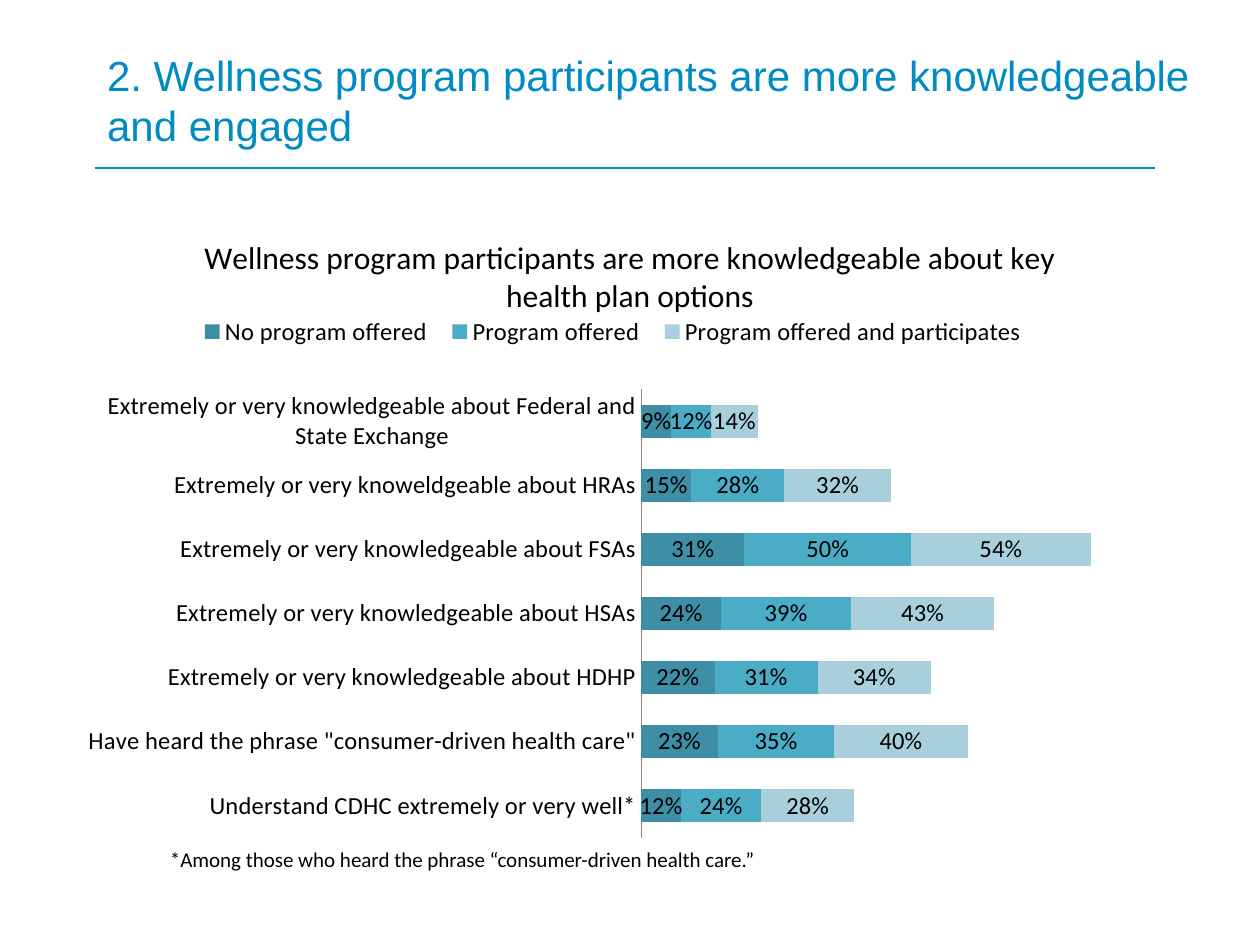
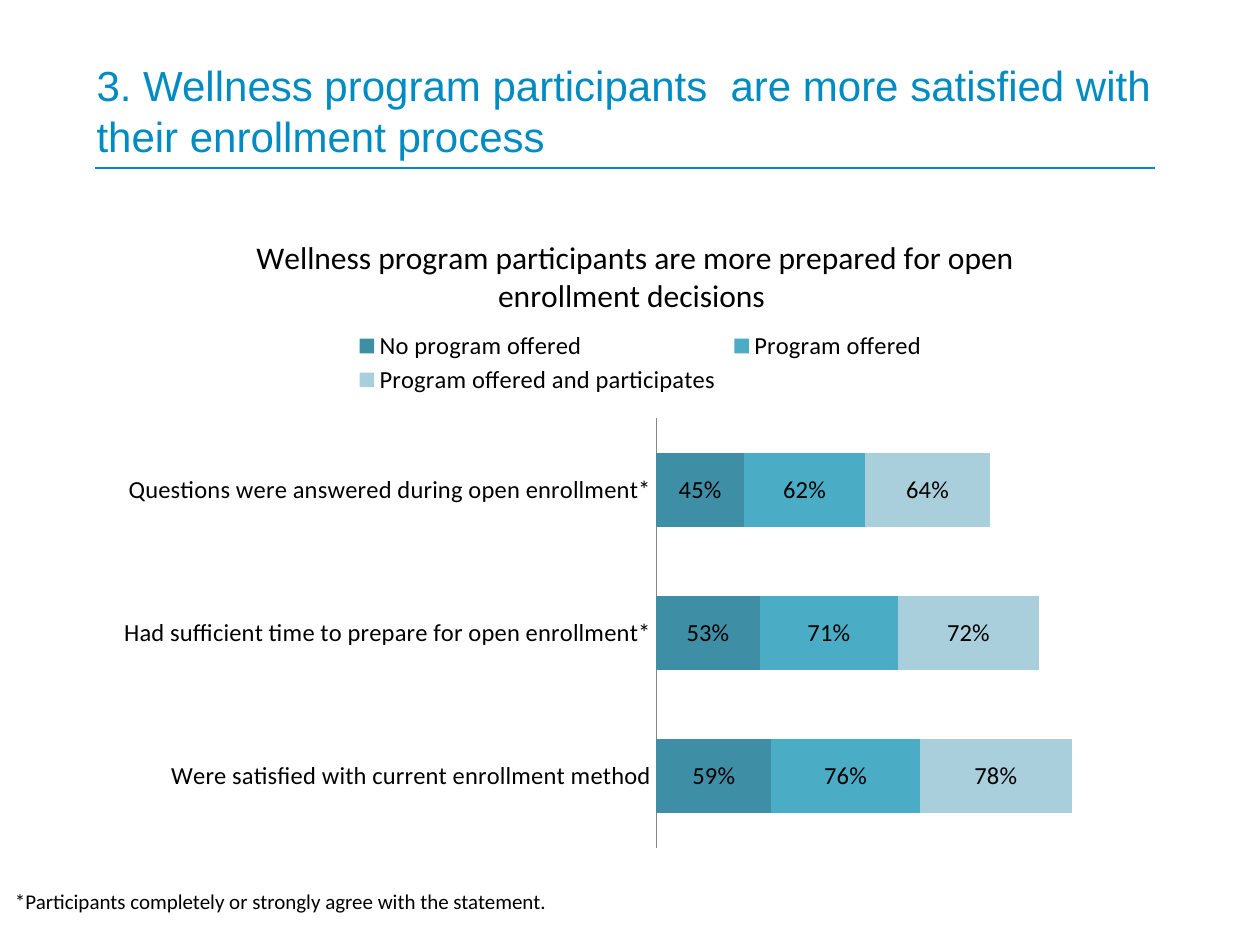
from dataclasses import dataclass

from pptx import Presentation
from pptx import util as u
from pptx.chart import chart as ch, data as cd
from pptx.dml import color
from pptx.enum import chart as ce, shapes, text
from pptx.oxml import parse_xml
from pptx.oxml import ns
from pptx.slide import Slide


@dataclass(frozen=True)
class Theme:
    """Colours, fonts and type sizes."""
    blue: str = "008BC2"
    ink: str = "000000"
    axis: str = "868686"
    bars: tuple[str, ...] = ("3E8EA5", "4BACC6", "A9CEDC")
    head: str = "Arial"
    body: str = "Calibri"
    title: int = 24
    chart: int = 18
    label: int = 14
    note: int = 12


@dataclass(frozen=True)
class Box:
    """Place and size: points on a slide, shares within a chart."""
    left: float
    top: float
    width: float
    height: float

    def points(self) -> tuple[u.Length, ...]:
        return tuple(u.Pt(n) for n in (self.left, self.top, self.width, self.height))


@dataclass(frozen=True)
class Page:
    title: str
    title_box: Box
    chart: str
    chart_box: Box
    plot_box: Box
    key_box: Box
    top: float  # end of the value axis
    rows: dict[str, tuple[float, ...]]  # bottom bar first
    note: str
    note_box: Box


THEME = Theme()
GROUPS = ("No program offered", "Program offered", "Program offered and participates")

PAGES = (
    Page(
        "2. Wellness program participants are more knowledgeable and engaged",
        Box(54, 12, 648, 90),
        "Wellness program participants are more knowledgeable about key health plan options",
        Box(36, 120, 648, 366),
        Box(0.51, 0.28, 0.47, 0.7),
        Box(0.11, 0.16, 0.75, 0.06),
        1.6,
        {
            "Understand CDHC extremely or very well*": (0.12, 0.24, 0.28),
            'Have heard the phrase "consumer-driven health care"': (0.23, 0.35, 0.4),
            "Extremely or very knowledgeable about HDHP": (0.22, 0.31, 0.34),
            "Extremely or very knowledgeable about HSAs": (0.24, 0.39, 0.43),
            "Extremely or very knowledgeable about FSAs": (0.31, 0.5, 0.54),
            "Extremely or very knoweldgeable about HRAs": (0.15, 0.28, 0.32),
            "Extremely or very knowledgeable about Federal and State Exchange":
                (0.09, 0.12, 0.14),
        },
        "*Among those who heard the phrase “consumer-driven health care.”",
        Box(90, 480, 510, 21.6),
    ),
    Page(
        "3. Wellness program participants  are more satisfied with their enrollment process",
        Box(48, 18, 648, 90),
        "Wellness program participants are more prepared for open enrollment decisions ",
        Box(60, 120, 606, 372),
        Box(0.52, 0.32, 0.46, 0.66),
        Box(0.23, 0.18, 0.55, 0.11),
        2.5,
        {
            "Were satisfied with current enrollment method": (0.59, 0.76, 0.78),
            "Had sufficient time to prepare for open enrollment*": (0.53, 0.71, 0.72),
            "Questions were answered during open enrollment*": (0.45, 0.62, 0.64),
        },
        "*Participants completely or strongly agree with the statement.",
        Box(1.5, 504, 612, 21.6),
    ),
)


def rgb(code: str) -> color.RGBColor:
    return color.RGBColor.from_string(code)


def style(font: text.MSO_ANCHOR, size: int, face: str = THEME.body,
          ink: str = THEME.ink) -> None:
    font.name, font.size, font.bold = face, u.Pt(size), False
    font.color.rgb = rgb(ink)


def pin(part, box: Box, slot: int, inner: bool = False) -> None:
    """Fix a chart part in place, as shares of the chart."""
    for old in part.findall(ns.qn("c:layout")):
        part.remove(old)
    target = '<c:layoutTarget val="inner"/>' if inner else ""
    modes = '<c:xMode val="edge"/><c:yMode val="edge"/>'
    sizes = (f'<c:x val="{box.left}"/><c:y val="{box.top}"/>'
             f'<c:w val="{box.width}"/><c:h val="{box.height}"/>')
    part.insert(slot, parse_xml(
        f'<c:layout {ns.nsdecls("c")}><c:manualLayout>{target}{modes}{sizes}'
        "</c:manualLayout></c:layout>"))


def add_title(slide: Slide, page: Page) -> None:
    title = slide.shapes.title
    title.left, title.top, title.width, title.height = page.title_box.points()
    frame = title.text_frame
    frame.text = page.title
    frame.auto_size = text.MSO_AUTO_SIZE.NONE
    frame.vertical_anchor = text.MSO_ANCHOR.MIDDLE
    para = frame.paragraphs[0]
    para.alignment = text.PP_ALIGN.LEFT
    style(para.font, THEME.title, THEME.head, THEME.blue)


def add_rule(slide: Slide) -> None:
    rule = slide.shapes.add_connector(
        shapes.MSO_CONNECTOR.STRAIGHT, u.Pt(54), u.Pt(96), u.Pt(660), u.Pt(96))
    rule.line.color.rgb = rgb(THEME.blue)
    rule.line.width = u.Pt(1)
    rule._element.spPr.append(parse_xml(f'<a:effectLst {ns.nsdecls("a")}/>'))


def add_bars(slide: Slide, page: Page) -> None:
    data = cd.CategoryChartData(number_format="0%")
    data.categories = list(page.rows)
    for name, vals in zip(GROUPS, zip(*page.rows.values())):
        data.add_series(name, vals)
    chart: ch.Chart = slide.shapes.add_chart(
        ce.XL_CHART_TYPE.BAR_STACKED, *page.chart_box.points(), data).chart
    style(chart.font, THEME.label)

    # Heading and key
    chart.has_title = True
    head = chart.chart_title.text_frame
    head.text = page.chart
    style(head.paragraphs[0].font, THEME.chart)
    chart.has_legend = True
    key = chart.legend
    key.position = ce.XL_LEGEND_POSITION.TOP
    key.include_in_layout = False
    style(key.font, THEME.label)
    pin(key._element, page.key_box, 1)

    # Axes
    cats, vals = chart.category_axis, chart.value_axis
    cats.major_tick_mark = ce.XL_TICK_MARK.NONE
    cats.format.line.color.rgb = rgb(THEME.axis)
    style(cats.tick_labels.font, THEME.label)
    vals.minimum_scale, vals.maximum_scale = 0, page.top
    vals.has_major_gridlines = False
    vals.visible = False

    # Bars and their labels
    plot = chart.plots[0]
    plot.gap_width, plot.overlap = 95, 100
    plot.vary_by_categories = False
    for bar, code in zip(plot.series, THEME.bars):
        bar.format.fill.solid()
        bar.format.fill.fore_color.rgb = rgb(code)
    plot.has_data_labels = True
    tags = plot.data_labels
    tags.show_value = True
    tags.number_format, tags.number_format_is_linked = "0%", False
    style(tags.font, THEME.label)
    pin(chart._chartSpace.chart.plotArea, page.plot_box, 0, inner=True)


def add_note(slide: Slide, page: Page) -> None:
    frame = slide.shapes.add_textbox(*page.note_box.points()).text_frame
    frame.word_wrap = True
    frame.auto_size = text.MSO_AUTO_SIZE.SHAPE_TO_FIT_TEXT
    frame.text = page.note
    style(frame.paragraphs[0].font, THEME.note)


def main() -> None:
    deck = Presentation()
    deck.slide_width, deck.slide_height = u.Pt(720), u.Pt(540)
    for page in PAGES:
        slide = deck.slides.add_slide(deck.slide_layouts[5])  # title only
        add_rule(slide)
        add_bars(slide, page)
        add_title(slide, page)
        add_note(slide, page)
    deck.save("out.pptx")


if __name__ == "__main__":
    main()
